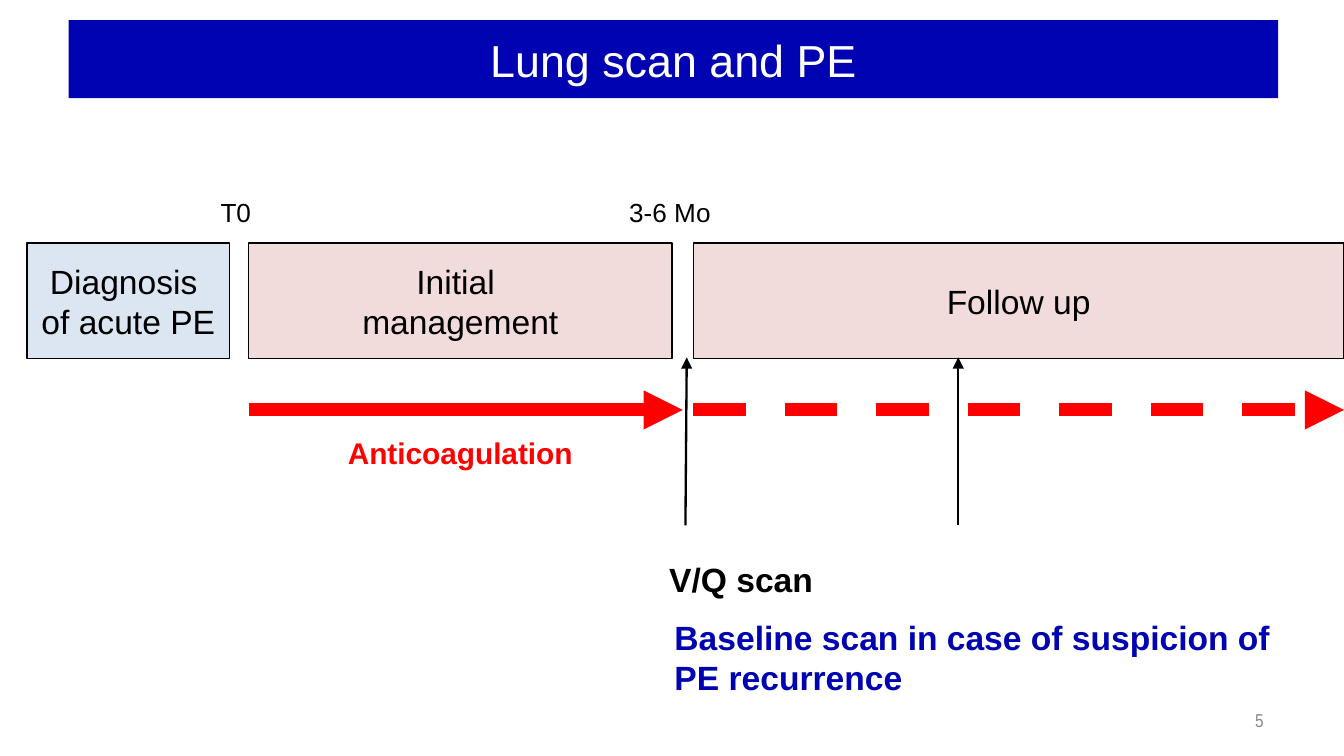
from typing import NamedTuple

from lxml import etree
from pptx import Presentation
from pptx.dml.color import RGBColor
from pptx.enum.dml import MSO_LINE
from pptx.enum.shapes import MSO_CONNECTOR, MSO_SHAPE
from pptx.enum.text import MSO_ANCHOR, MSO_AUTO_SIZE, PP_ALIGN
from pptx.oxml.ns import qn
from pptx.util import Inches, Pt

NAVY = RGBColor(0x00, 0x03, 0xB1)
BLACK = RGBColor(0x00, 0x00, 0x00)
WHITE = RGBColor(0xFF, 0xFF, 0xFF)
GREY = RGBColor(0x89, 0x89, 0x89)
RED = RGBColor(0xFF, 0x00, 0x00)
PALE_BLUE = RGBColor(0xDC, 0xE6, 0xF2)
PALE_PINK = RGBColor(0xF2, 0xDC, 0xDB)

LEFT, CENTER, RIGHT = PP_ALIGN.LEFT, PP_ALIGN.CENTER, PP_ALIGN.RIGHT
TOP, MIDDLE = MSO_ANCHOR.TOP, MSO_ANCHOR.MIDDLE
DASH = MSO_LINE.DASH
TITLE_ONLY = 5

SLIDE_WIDTH = 10
SLIDE_HEIGHT = SLIDE_WIDTH * 9 / 16
PHASE_TOP, PHASE_HEIGHT = 1.81, 0.86
PHASE_BOTTOM = 2.66
THERAPY_Y = 3.05
SCAN_Y = 3.91


class Phase(NamedTuple):
    text: str
    left: float
    width: float
    fill: RGBColor
    wrap: bool = True


class Label(NamedTuple):
    text: str
    left: float
    top: float
    width: float
    height: float
    style: dict


class Arrow(NamedTuple):
    start: tuple[float, float]
    end: tuple[float, float]
    color: RGBColor
    weight: float
    dash: MSO_LINE | None = None


PHASES = [
    Phase("Diagnosis \nof acute PE", 0.2, 1.51, PALE_BLUE, wrap=False),
    Phase("Initial \nmanagement", 1.85, 3.15, PALE_PINK),
    Phase("Follow up", 5.16, 4.84, PALE_PINK),
]

TIME_STYLE = dict(size=14, wrap=False)
LABELS = [
    Label("T0", 1.54, 1.41, 0.43, 0.34, TIME_STYLE),
    Label("3-6 Mo", 4.58, 1.41, 0.81, 0.34, TIME_STYLE),
    Label("Anticoagulation", 2.48, THERAPY_Y, 1.89, 0.45,
          dict(size=16, color=RED, bold=True, spacing=1.5)),
    Label("V/Q scan", 4.53, 3.92, 1.97, 0.62,
          dict(bold=True, spacing=1.5, anchor=MIDDLE)),
    Label("Baseline scan in case of suspicion of PE recurrence",
          4.92, 4.54, 4.69, 0.71, dict(color=NAVY, bold=True, align=LEFT)),
    Label("5", 8.94, 5.21, 0.56, 0.3,
          dict(size=10, color=GREY, font="Arial Narrow", align=RIGHT, anchor=MIDDLE)),
]

ARROWS = [
    Arrow((1.85, THERAPY_Y), (5.08, THERAPY_Y), RED, 7),
    Arrow((5.16, THERAPY_Y), (10, THERAPY_Y), RED, 7, DASH),
    Arrow((5.1, SCAN_Y), (5.11, PHASE_BOTTOM), BLACK, 1.25),
    Arrow((7.13, SCAN_Y), (7.13, PHASE_BOTTOM), BLACK, 1.25),
]


def write_text(shape, text: str, *, size: float = 18, color: RGBColor = BLACK,
               font: str = "Arial", bold: bool = False, align: PP_ALIGN = CENTER,
               anchor: MSO_ANCHOR = TOP, spacing: float = 1, wrap: bool = True) -> None:
    frame = shape.text_frame
    frame.text = text
    frame.word_wrap = wrap
    frame.auto_size = MSO_AUTO_SIZE.NONE
    frame.vertical_anchor = anchor
    for para in frame.paragraphs:
        para.alignment = align
        para.line_spacing = spacing
        for span in para.runs:
            span.font.name = font
            span.font.size = Pt(size)
            span.font.bold = bold
            span.font.color.rgb = color


def add_title(page, text: str) -> None:
    title = page.shapes.title
    title.left, title.top = Inches(0.51), Inches(0.15)
    title.width, title.height = Inches(9), Inches(0.58)
    title.fill.solid()
    title.fill.fore_color.rgb = NAVY
    write_text(title, text, size=24, color=WHITE, anchor=MIDDLE)


def add_phase(page, phase: Phase) -> None:
    box = page.shapes.add_shape(
        MSO_SHAPE.RECTANGLE, Inches(phase.left), Inches(PHASE_TOP),
        Inches(phase.width), Inches(PHASE_HEIGHT))
    box.shadow.inherit = False
    box.fill.solid()
    box.fill.fore_color.rgb = phase.fill
    box.line.color.rgb = BLACK
    box.line.width = Pt(0.75)
    write_text(box, phase.text, anchor=MIDDLE, wrap=phase.wrap)


def add_label(page, label: Label) -> None:
    box = page.shapes.add_textbox(Inches(label.left), Inches(label.top),
                                  Inches(label.width), Inches(label.height))
    write_text(box, label.text, **label.style)


def add_arrow(page, arrow: Arrow) -> None:
    ends = [Inches(length) for length in arrow.start + arrow.end]
    connector = page.shapes.add_connector(MSO_CONNECTOR.STRAIGHT, *ends)
    connector.line.color.rgb = arrow.color
    connector.line.width = Pt(arrow.weight)
    if arrow.dash is not None:
        connector.line.dash_style = arrow.dash
    properties = connector.element.spPr
    etree.SubElement(properties.find(qn("a:ln")), qn("a:tailEnd"), type="triangle")
    etree.SubElement(properties, qn("a:effectLst"))


def main() -> None:
    deck = Presentation()
    deck.slide_width, deck.slide_height = Inches(SLIDE_WIDTH), Inches(SLIDE_HEIGHT)
    page = deck.slides.add_slide(deck.slide_layouts[TITLE_ONLY])
    add_title(page, "Lung scan and PE")
    for phase in PHASES:
        add_phase(page, phase)
    for arrow in ARROWS:
        add_arrow(page, arrow)
    for label in LABELS:
        add_label(page, label)
    deck.save("out.pptx")


if __name__ == "__main__":
    main()
